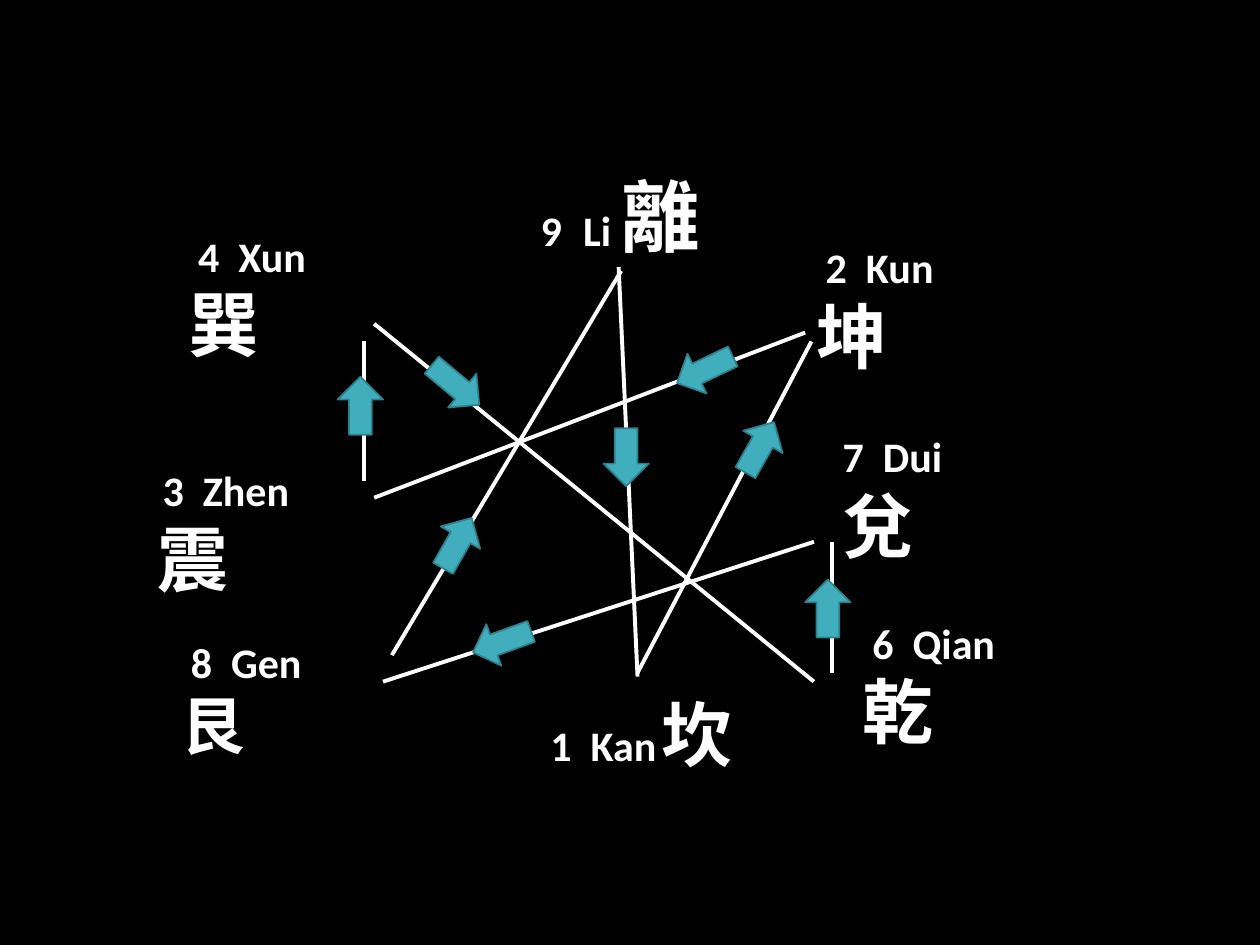
from dataclasses import dataclass

from pptx import Presentation
from pptx import util as u
from pptx.dml.color import RGBColor
from pptx.enum import shapes, text
from pptx.oxml.ns import qn
from lxml import etree

COLUMNS, ROWS = 100, 75


@dataclass(frozen=True)
class Theme:
    font: str = "Calibri"
    ground: str = "000000"
    ink: str = "FFFFFF"
    arrow: str = "41AEBD"
    arrow_edge: str = "30818C"
    name: float = 24
    wide_gap: float = 27
    gap: float = 13.5
    trigram: float = 40.5
    small_trigram: float = 36
    large_trigram: float = 45
    path_width: float = 2.25
    edge_width: float = 1


THEME = Theme()

PATHS = [
    (50.6, 53.4, 64.4, 27.1),
    (63.9, 26.4, 29.7, 39.5),
    (28.9, 27.1, 28.9, 38.2),
    (29.7, 25.7, 64.6, 54.1),
    (66.05, 43, 66.05, 53.4),
    (64.6, 43, 30.4, 54.1),
    (49.3, 21.5, 31.1, 52),
    (49.1, 21.2, 50.6, 53.7),
]

UPRIGHT, SLANTED = (3.6, 4.6), (3.5, 4.9)
ARROWS = [
    (47.9, 34, UPRIGHT, 0),
    (58.5, 33.2, UPRIGHT, 209.6),
    (54.2, 26.9, SLANTED, 64.4),
    (26.8, 29.9, UPRIGHT, 180),
    (34.4, 28.1, SLANTED, 309.9),
    (63.9, 46, UPRIGHT, 180),
    (38.1, 48.5, SLANTED, 70.2),
    (34.5, 40.8, UPRIGHT, 209.6),
]

ONE_LINE_LABELS = [
    ((42.7, 54.3, 16.9, 7.8),
     [("1  Kan", THEME.name), (" ", THEME.gap), ("坎", THEME.trigram)]),
    ((41.5, 12.8, 15.6, 8.6),
     [(" ", THEME.gap), ("9", THEME.name), ("  ", THEME.wide_gap),
      ("Li", THEME.name), ("  ", THEME.gap), ("離", THEME.large_trigram)]),
]

STACKED_LABELS = [
    ((63.8, 18.7, 18, 7.8), [(" 2  Kun ", THEME.name), ("坤", THEME.trigram)]),
    ((65.9, 33.7, 16.4, 7.8), [("7  Dui ", THEME.name), ("兌", THEME.trigram)]),
    ((11.5, 36.4, 19.2, 7.8),
     [(" ", THEME.gap), ("3  Zhen ", THEME.name), ("震", THEME.trigram)]),
    ((14, 17.8, 17.7, 7.8),
     [(" 4  Xun", THEME.name), (" ", THEME.gap), ("巽", THEME.trigram)]),
    ((13.4, 50, 16.8, 7.1), [(" 8  Gen", THEME.name), ("艮", THEME.small_trigram)]),
    ((67.5, 48.5, 19.2, 7.8), [(" 6  Qian ", THEME.name), ("乾", THEME.trigram)]),
]


def colour(code):
    """Turn a hex code into a colour."""
    return RGBColor.from_string(code)


def place(deck, left, top, width, height):
    """Turn grid columns and rows into slide lengths."""
    column, row = deck.slide_width / COLUMNS, deck.slide_height / ROWS
    return [round(n * step) for n, step in
            ((left, column), (top, row), (width, column), (height, row))]


def add_path(deck, group, ends):
    """Draw one straight path between two palaces."""
    path = group.shapes.add_connector(shapes.MSO_CONNECTOR.STRAIGHT, *place(deck, *ends))
    path.line.color.rgb = colour(THEME.ink)
    path.line.width = u.Pt(THEME.path_width)
    etree.SubElement(path._element.spPr, qn("a:effectLst"))


def add_arrow(deck, group, left, top, size, turn):
    """Draw a block arrow that points along a path."""
    arrow = group.shapes.add_shape(
        shapes.MSO_SHAPE.DOWN_ARROW, *place(deck, left, top, *size))
    arrow.rotation = turn
    arrow.shadow.inherit = False
    arrow.fill.solid()
    arrow.fill.fore_color.rgb = colour(THEME.arrow)
    arrow.line.color.rgb = colour(THEME.arrow_edge)
    arrow.line.width = u.Pt(THEME.edge_width)


def add_label(deck, group, area, spans, stacked):
    """Write a palace's number, name and trigram on one line or two."""
    box = group.shapes.add_textbox(*place(deck, *area))
    frame = box.text_frame
    frame.word_wrap = stacked
    frame.auto_size = text.MSO_AUTO_SIZE.SHAPE_TO_FIT_TEXT
    if stacked:
        frame.margin_right = u.Inches(0.25)
    para = frame.paragraphs[0]
    for words, size in spans:
        span = para.add_run()
        span.text = words
        span.font.name = THEME.font
        span.font.size = u.Pt(size)
        span.font.bold = True
        span.font.color.rgb = colour(THEME.ink)


def main():
    """Build the nine palaces slide."""
    deck = Presentation()
    deck.slide_width, deck.slide_height = u.Inches(10), u.Inches(7.5)
    page = deck.slides.add_slide(deck.slide_layouts[6])
    page.background.fill.solid()
    page.background.fill.fore_color.rgb = colour(THEME.ground)
    group = page.shapes.add_group_shape()
    for ends in PATHS:
        add_path(deck, group, ends)
    for arrow in ARROWS:
        add_arrow(deck, group, *arrow)
    for labels, stacked in ((ONE_LINE_LABELS, False), (STACKED_LABELS, True)):
        for area, spans in labels:
            add_label(deck, group, area, spans, stacked)
    deck.save("out.pptx")


if __name__ == "__main__":
    main()
